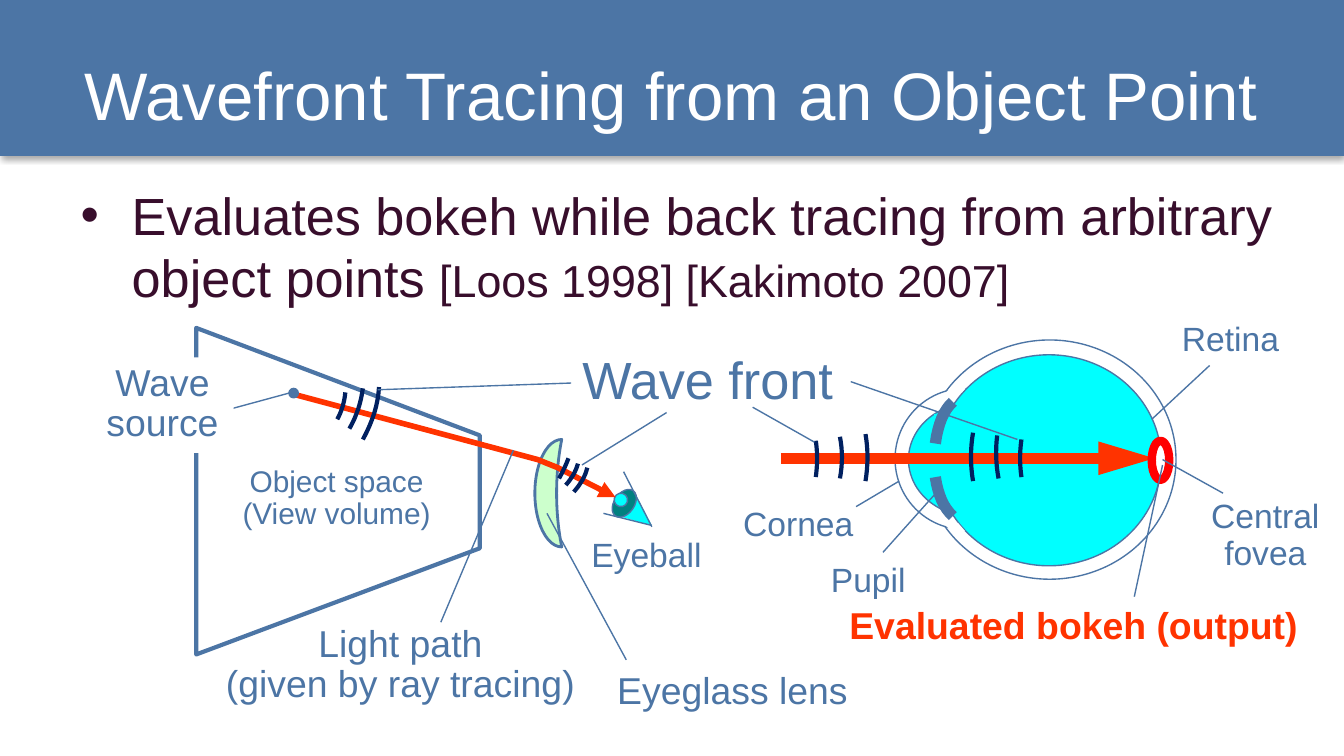
import pptx
import pptx.util
import pptx.dml.color
import pptx.enum.shapes
import pptx.enum.text
import pptx.oxml
import pptx.oxml.ns
import lxml.etree

PX = 9144  # EMU per px, 100 px to the inch
COLORS = {
    "blue": "4C75A5", "plum": "380E2C", "white": "FFFFFF", "cyan": "00FFFF",
    "lens": "CCFFCC", "teal": "008080", "orange": "FF3300", "red": "FF0000",
    "navy": "002060",
}
RGB = {name: pptx.dml.color.RGBColor.from_string(code) for name, code in COLORS.items()}
SHAPE = pptx.enum.shapes.MSO_SHAPE
CENTER = pptx.enum.text.PP_ALIGN.CENTER

presentation = pptx.Presentation()
presentation.slide_width = 1000 * PX
presentation.slide_height = presentation.slide_width * 9 // 16
slide = presentation.slides.add_slide(presentation.slide_layouts[1])
shapes = slide.shapes


def style(shape, fill=None, line=None, width=0.75):
    shape.shadow.inherit = False
    if fill:
        shape.fill.solid()
        shape.fill.fore_color.rgb = RGB[fill]
    else:
        shape.fill.background()
    if line:
        shape.line.color.rgb = RGB[line]
        shape.line.width = pptx.util.Pt(width)
    else:
        shape.line.fill.background()
    return shape


def add_outline(points, closed, fill=None, line=None, width=0.75):
    scaled = [(round(x * PX), round(y * PX)) for x, y in points]
    builder = shapes.build_freeform(*scaled[0], scale=1.0)
    builder.add_line_segments(scaled[1:], close=closed)
    return style(builder.convert_to_shape(), fill, line, width)


# Title band with a soft shadow, behind the title
band = style(shapes.add_shape(SHAPE.RECTANGLE, 0, 0, 1000 * PX, 116 * PX), "blue")
effects = band._element.spPr.find(pptx.oxml.ns.qn("a:effectLst"))
effects.append(pptx.oxml.parse_xml(
    f'<a:outerShdw {pptx.oxml.ns.nsdecls("a")} blurRad="39370" dist="22860" dir="5400000" '
    'rotWithShape="0"><a:srgbClr val="000000"><a:alpha val="35000"/></a:srgbClr></a:outerShdw>'))
shapes._spTree.insert(2, band._element)

# Title and bullet
title, body = shapes.title, slide.placeholders[1]
for placeholder, box, text in (
    (title, (28, 23, 943, 94), "Wavefront Tracing from an Object Point"),
    (body, (50, 131, 937, 371), "Evaluates bokeh while back tracing from arbitrary object points "),
):
    placeholder.left, placeholder.top, placeholder.width, placeholder.height = (v * PX for v in box)
    placeholder.text_frame.text = text
    placeholder.text_frame.auto_size = pptx.enum.text.MSO_AUTO_SIZE.NONE
title.text_frame.vertical_anchor = pptx.enum.text.MSO_ANCHOR.MIDDLE
title.text_frame.paragraphs[0].alignment = CENTER
bullet = body.text_frame.paragraphs[0]
bullet.space_before = pptx.util.Pt(0)
properties = bullet._p.get_or_add_pPr()
properties.set("marL", str(38 * PX))
properties.set("indent", str(-38 * PX))
bullet.add_run().text = "[Loos 1998] [Kakimoto 2007]"
heading_run = title.text_frame.paragraphs[0].runs[0]
for run, size, color in zip([heading_run, *bullet.runs], (36, 28, 24), ("white", "plum", "plum")):
    run.font.name = "Arial"
    run.font.size = pptx.util.Pt(size)
    run.font.color.rgb = RGB[color]

# View volume
add_outline([(146, 244), (357, 324), (357, 408), (146, 487)], True, line="blue", width=2.25)

# Eyeglass lens
lens = style(shapes.add_shape(SHAPE.MOON, 398 * PX, 327 * PX, 20 * PX, 80 * PX), "lens", "blue", 1.5)
lens.adjustments[0] = 0.81

# Small eyeball and large eye
add_outline([(460, 384), (485, 391), (473, 368)], True, "cyan")
for left, top, width, height, rotation, fill in (
    (457, 363, 15, 23, 35, "teal"),
    (457, 367, 10, 10, 15, "cyan"),
    (687, 253, 188, 178, 0, "white"),
    (666, 289, 104, 105, 0, "white"),
    (676, 300, 94, 84, 0, "cyan"),
    (697, 264, 167, 157, 0, "cyan"),
):
    oval = shapes.add_shape(SHAPE.OVAL, left * PX, top * PX, width * PX, height * PX)
    style(oval, fill, "blue").rotation = rotation

# Patches that join the cornea to the eye
add_outline([(714, 300), (704, 304), (704, 379), (714, 383)], True, "cyan")
style(shapes.add_shape(SHAPE.RECTANGLE, 695 * PX, 308 * PX, 10 * PX, 66 * PX), "cyan")
for left, top, height, slant, flipped in ((704, 287, 5, 0.85, "0"), (702, 389, 6, 0.87, "1")):
    patch = shapes.add_shape(SHAPE.PARALLELOGRAM, left * PX, top * PX, 16 * PX, height * PX)
    style(patch, "white").adjustments[0] = slant
    patch._element.spPr.xfrm.set("flipH", flipped)

# Light path, and straight lines: from, to, colour, width
light_path = add_outline([(217, 293), (400, 342), (415, 348), (458, 370)], False, line="orange", width=3)
connectors = []
for x1, y1, x2, y2, color, width in (
    (581, 341, 859, 341, "orange", 6),
    (464, 351, 485, 392, "blue", 0.75),
    (449, 382, 485, 391, "blue", 0.75),
):
    connector = shapes.add_connector(
        pptx.enum.shapes.MSO_CONNECTOR.STRAIGHT, x1 * PX, y1 * PX, x2 * PX, y2 * PX)
    connector.line.color.rgb = RGB[color]
    connector.line.width = pptx.util.Pt(width)
    connectors.append(connector)
for arrow, length in ((light_path, "med"), (connectors[0], "lg")):
    lxml.etree.SubElement(arrow._element.spPr.get_or_add_ln(), pptx.oxml.ns.qn("a:tailEnd"),
                          type="triangle", w="med", len=length)

# Iris and wave fronts: start, control point and end of each curve
iris = [
    ((709, 299), (699, 308), (696, 330)), ((709, 384), (699, 375), (696, 355)),
]
wave_fronts = [
    ((257, 292), (256, 303), (251, 312)), ((270, 289), (268, 305), (260, 319)),
    ((282, 288), (281, 307), (270, 327)), ((437, 348), (435, 357), (427, 366)),
    ((430, 345), (428, 353), (421, 361)), ((423, 341), (420, 349), (416, 356)),
    ((724, 322), (721, 340), (724, 358)), ((742, 324), (740, 340), (743, 356)),
    ((760, 327), (758, 341), (760, 355)), ((644, 323), (647, 340), (644, 358)),
    ((625, 325), (628, 340), (625, 356)), ((607, 328), (609, 341), (607, 355)),
]
for curves, color, width in ((iris, "blue", 6), (wave_fronts, "navy", 2.25)):
    for start, control, end in curves:
        points = []
        for step in range(9):
            t = step / 8
            points.append([(1 - t) ** 2 * a + 2 * t * (1 - t) * b + t * t * c
                           for a, b, c in zip(start, control, end)])
        add_outline(points, False, line=color, width=width)

# Wave source point, and evaluated bokeh on the fovea
style(shapes.add_shape(SHAPE.OVAL, 215 * PX, 289 * PX, 7 * PX, 7 * PX), "blue", "blue")
style(shapes.add_shape(SHAPE.OVAL, 857 * PX, 328 * PX, 13 * PX, 29 * PX), "white", "red", 4.5)

# Leader lines
for x1, y1, x2, y2 in (
    (217, 292, 169, 305), (407, 382, 466, 491), (281, 290, 425, 285), (637, 377, 669, 358),
    (857, 312, 900, 272), (844, 444, 865, 346), (657, 411, 699, 364), (606, 329, 560, 303),
    (757, 327, 633, 284), (433, 346, 496, 307), (382, 335, 328, 463), (865, 342, 910, 367),
):
    leader = shapes.add_connector(
        pptx.enum.shapes.MSO_CONNECTOR.STRAIGHT, x1 * PX, y1 * PX, x2 * PX, y2 * PX)
    leader.line.color.rgb = RGB["blue"]
    leader.line.width = pptx.util.Pt(0.75)
    connectors.append(leader)
for connector in connectors:
    lxml.etree.SubElement(connector._element.spPr, pptx.oxml.ns.qn("a:effectLst"))

# Labels: box, size, fill, text
for left, top, width, height, size, fill, text in (
    (68, 266, 106, 71, 20, "white", "Wave source"),
    (439, 495, 212, 40, 20, None, "Eyeglass lens"),
    (379, 259, 295, 53, 28, None, "Wave front"),
    (537, 373, 114, 37, 18, None, "Cornea"),
    (860, 235, 111, 37, 18, None, "Retina"),
    (611, 447, 376, 40, 20, None, "Evaluated bokeh (output)"),
    (597, 414, 98, 37, 18, None, "Pupil"),
    (169, 342, 163, 59, 16, "white", "Object space\n(View volume)"),
    (142, 460, 312, 71, 20, None, "Light path\n(given by ray tracing)"),
    (424, 396, 114, 37, 18, None, "Eyeball"),
    (886, 367, 111, 65, 18, None, "Central fovea"),
):
    label = shapes.add_textbox(left * PX, top * PX, width * PX, height * PX)
    if fill:
        label.fill.solid()
        label.fill.fore_color.rgb = RGB[fill]
    label.text_frame.word_wrap = True
    label.text_frame.text = text
    is_output = text.startswith("Evaluated")
    for paragraph in label.text_frame.paragraphs:
        paragraph.alignment = CENTER
        paragraph.line_spacing = 0.9
        font = paragraph.runs[0].font
        font.name = "Arial"
        font.size = pptx.util.Pt(size)
        font.bold = is_output
        font.color.rgb = RGB["orange" if is_output else "blue"]

presentation.save("out.pptx")
